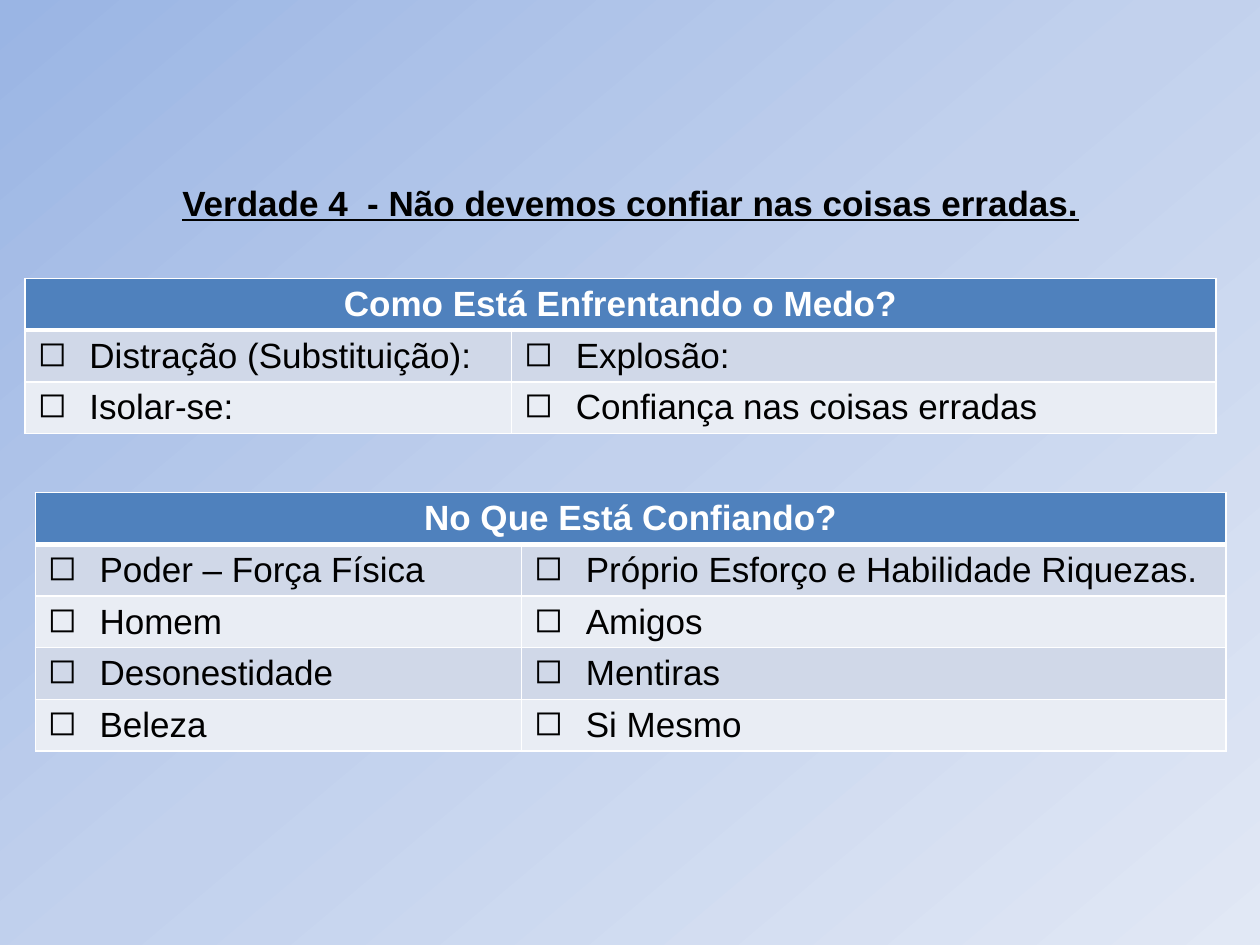
from copy import deepcopy

from lxml import etree
from pptx import Presentation
from pptx.dml.color import RGBColor
from pptx.enum.text import MSO_ANCHOR, PP_ALIGN
from pptx.oxml.ns import qn
from pptx.util import Inches, Pt

CENTER, LEFT, TOP = PP_ALIGN.CENTER, PP_ALIGN.LEFT, MSO_ANCHOR.TOP
BLACK = RGBColor(0, 0, 0)
WHITE = RGBColor(0xFF, 0xFF, 0xFF)
BLUE = RGBColor(0x4F, 0x81, 0xBD)
BANDS = RGBColor(0xD0, 0xD8, 0xE8), RGBColor(0xE9, 0xED, 0xF4)
SHADES = (
    (0, RGBColor(0x9A, 0xB5, 0xE4)),
    (0.5, RGBColor(0xC2, 0xD1, 0xED)),
    (1, RGBColor(0xE1, 0xE8, 0xF5)),
)
BASE = {"name": "Arial", "size": Pt(20), "bold": False, "underline": False}
HEAD = {**BASE, "bold": True}
TITLE = {**HEAD, "underline": True}
COLS = 3.86, 5.59
ROW = 0.41
FEARS = (
    ("Distração (Substituição):", "Explosão:"),
    ("Isolar-se:", "Confiança nas coisas erradas"),
)
TRUSTS = (
    ("Poder – Força Física", "Próprio Esforço e Habilidade Riquezas."),
    ("Homem", "Amigos"),
    ("Desonestidade", "Mentiras"),
    ("Beleza", "Si Mesmo"),
)


def set_bullet(para, mark=None, indent=0):
    """Give a paragraph a hanging bullet, or none."""
    props = para._p.get_or_add_pPr()
    props.set("marL", str(Inches(indent)))
    props.set("indent", str(-Inches(indent)))
    if mark:
        etree.SubElement(props, qn("a:buChar"), char=mark)
    else:
        etree.SubElement(props, qn("a:buNone"))


def set_text(frame, text, style, color, align=LEFT, mark=None, indent=0):
    """Write one formatted paragraph into a text frame."""
    para = frame.paragraphs[0]
    para.text = text
    set_bullet(para, mark, indent)
    para.alignment = align
    para.space_before = Pt(0)
    font = para.runs[0].font
    for key, value in style.items():
        setattr(font, key, value)
    font.color.rgb = color


def set_edges(cell, top, bottom):
    """Draw white borders of the given point widths round a cell."""
    props = cell._tc.get_or_add_tcPr()
    for side, width in (("L", 1), ("R", 1), ("T", top), ("B", bottom)):
        line = etree.SubElement(props, qn(f"a:ln{side}"), w=str(Pt(width)))
        fill = etree.SubElement(line, qn("a:solidFill"))
        etree.SubElement(fill, qn("a:srgbClr"), val=str(WHITE))


def add_grid(slide, left, top, head, rows):
    """Add a two-column checklist table under a merged heading."""
    count = len(rows) + 1
    table = slide.shapes.add_table(
        count, len(COLS), Inches(left), Inches(top),
        Inches(sum(COLS)), Inches(ROW * count)).table
    for col, width in zip(table.columns, COLS):
        col.width = Inches(width)
    for i, row in enumerate(table.rows):
        row.height = Inches(ROW)
        for cell in row.cells:
            set_edges(cell, 3 if i == 1 else 1, 3 if i == 0 else 1)
            cell.fill.solid()
            cell.fill.fore_color.rgb = BANDS[(i - 1) % 2] if i else BLUE
    table.cell(0, 0).merge(table.cell(0, 1))
    set_text(table.cell(0, 0).text_frame, head, HEAD, WHITE, CENTER)
    for i, texts in enumerate(rows, 1):
        for j, text in enumerate(texts):
            set_text(table.cell(i, j).text_frame, text, BASE, BLACK,
                     mark="◻", indent=0.41)


def set_back(slide):
    """Fill the background with a slanted three-stop gradient."""
    fill = slide.background.fill
    fill.gradient()
    fill.gradient_angle = 310
    stops = slide.element.find(".//" + qn("a:gsLst"))
    stops.insert(1, deepcopy(stops[0]))
    for stop, (place, color) in zip(fill.gradient_stops, SHADES):
        stop.position = place
        stop.color.rgb = color


def add_title(slide, text):
    """Place the heading in the body placeholder and drop the empty title."""
    title = slide.shapes.title.element
    title.getparent().remove(title)
    body = slide.placeholders[1]
    box = {"left": 0.28, "top": 1.39, "width": 9.45, "height": 6.11}
    for key, value in box.items():
        setattr(body, key, Inches(value))
    body.text_frame.vertical_anchor = TOP
    set_text(body.text_frame, text, TITLE, BLACK, CENTER)


def main():
    """Build and save the slide."""
    deck = Presentation()
    deck.slide_width, deck.slide_height = Inches(10), Inches(7.5)
    slide = deck.slides.add_slide(deck.slide_layouts[1])
    set_back(slide)
    add_title(slide, "Verdade 4  - Não devemos confiar nas coisas erradas.")
    add_grid(slide, 0.2, 2.21, "Como Está Enfrentando o Medo?", FEARS)
    add_grid(slide, 0.28, 3.91, "No Que Está Confiando?", TRUSTS)
    deck.save("out.pptx")


if __name__ == "__main__":
    main()
